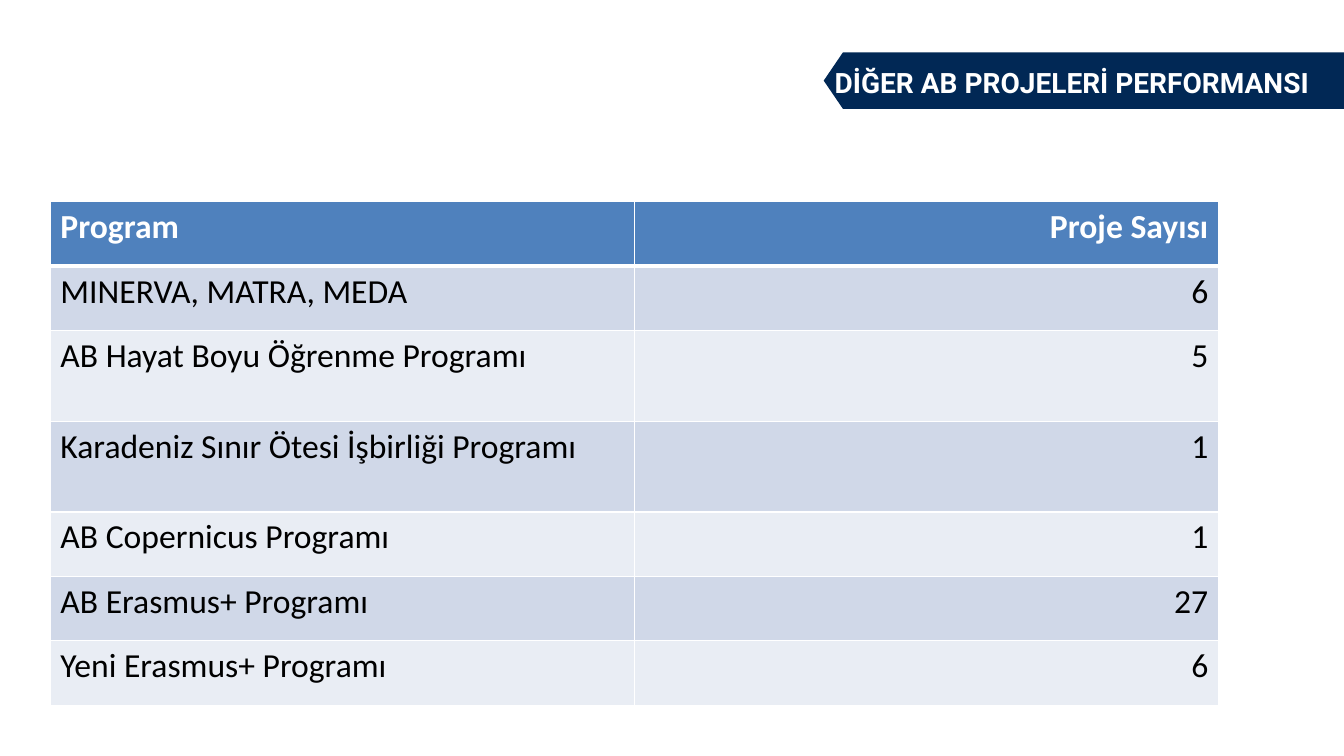
import pptx
import pptx.dml.color
import pptx.enum.text
import pptx.oxml
import pptx.oxml.ns
import pptx.util

ALIGN = pptx.enum.text.PP_ALIGN
BANNER = [(62.72, 6.93), (101.73, 6.93), (101.73, 14.4), (62.72, 14.4), (61.29, 10.67)]
PROGRAMS = [
    ("Program", "Proje Sayısı"),
    ("MINERVA, MATRA, MEDA", "6"),
    ("AB Hayat Boyu Öğrenme Programı", "5"),
    ("Karadeniz Sınır Ötesi İşbirliği Programı", "1"),
    ("AB Copernicus Programı", "1"),
    ("AB Erasmus+ Programı", "27"),
    ("Yeni Erasmus+ Programı", "6"),
]
SHORT_ROW, TALL_ROW = 8.53, 12
ROW_HEIGHTS = [SHORT_ROW] * 2 + [TALL_ROW] * 2 + [SHORT_ROW] * 3


def color(value):
    return pptx.dml.color.RGBColor.from_string(value)


class SlideBuilder:
    """Draw styled elements on one slide, with lengths in percent of its size."""

    styles = {
        "title": {"name": "Roboto", "size": pptx.util.Pt(20), "bold": True, "color": "FFFFFF"},
        "header": {"name": "Calibri", "size": pptx.util.Pt(24), "bold": True, "color": "FFFFFF"},
        "body": {"name": "Calibri", "size": pptx.util.Pt(24), "bold": False, "color": "000000"},
    }
    navy, blue, bands, rule = "012855", "4F81BD", ("E9EDF4", "D0D8E8"), "FFFFFF"

    def __init__(self, deck):
        self.width, self.height = deck.slide_width, deck.slide_height
        self.slide = deck.slides.add_slide(deck.slide_layouts[6])

    def across(self, share):
        return round(self.width * share / 100)

    def down(self, share):
        return round(self.height * share / 100)

    def fill_text(self, frame, text, style, align=ALIGN.LEFT):
        para = frame.paragraphs[0]
        para.alignment = align
        span = para.add_run()
        span.text = text
        for key, value in self.styles[style].items():
            if key == "color":
                span.font.color.rgb = color(value)
            else:
                setattr(span.font, key, value)

    def outline(self, points, fill):
        corners = [(self.across(x), self.down(y)) for x, y in points]
        builder = self.slide.shapes.build_freeform(*corners[0])
        builder.add_line_segments(corners[1:], close=True)
        shape = builder.convert_to_shape()
        shape.shadow.inherit = False
        shape.fill.solid()
        shape.fill.fore_color.rgb = color(fill)
        shape.line.fill.background()

    def text(self, left, top, width, height, text, style):
        box = self.slide.shapes.add_textbox(
            self.across(left), self.down(top), self.across(width), self.down(height))
        box.text_frame.word_wrap = True
        self.fill_text(box.text_frame, text, style)

    def borders(self, cell, widths):
        properties = cell._tc.get_or_add_tcPr()
        for side, points in widths.items():
            properties.append(pptx.oxml.parse_xml(
                f'<a:ln{side} {pptx.oxml.ns.nsdecls("a")} w="{pptx.util.Pt(points)}">'
                f'<a:solidFill><a:srgbClr val="{self.rule}"/></a:solidFill></a:ln{side}>'))

    def table(self, left, top, column_width, row_heights, rows):
        columns = len(rows[0])
        table = self.slide.shapes.add_table(
            len(rows), columns, self.across(left), self.down(top),
            self.across(column_width * columns), self.down(sum(row_heights))).table
        for column in table.columns:
            column.width = self.across(column_width)
        for index, (height, values) in enumerate(zip(row_heights, rows)):
            table.rows[index].height = self.down(height)
            style = "body" if index else "header"
            fill = self.bands[index % 2] if index else self.blue
            widths = {"L": 1, "R": 1, "T": 3 if index == 1 else 1, "B": 1 if index else 3}
            for number, value in enumerate(values):
                cell = table.cell(index, number)
                self.borders(cell, widths)
                cell.fill.solid()
                cell.fill.fore_color.rgb = color(fill)
                self.fill_text(cell.text_frame, value, style, ALIGN.RIGHT if number else ALIGN.LEFT)


def main():
    deck = pptx.Presentation()
    deck.slide_width = pptx.util.Inches(13.33)
    deck.slide_height = pptx.util.Inches(7.5)
    page = SlideBuilder(deck)
    page.outline(BANNER, page.navy)
    page.text(61.37, 8, 40.81, 5.87, "DİĞER AB PROJELERİ PERFORMANSI", "title")
    page.table(3.75, 26.67, 43.45, ROW_HEIGHTS, PROGRAMS)
    deck.save("out.pptx")


if __name__ == "__main__":
    main()
